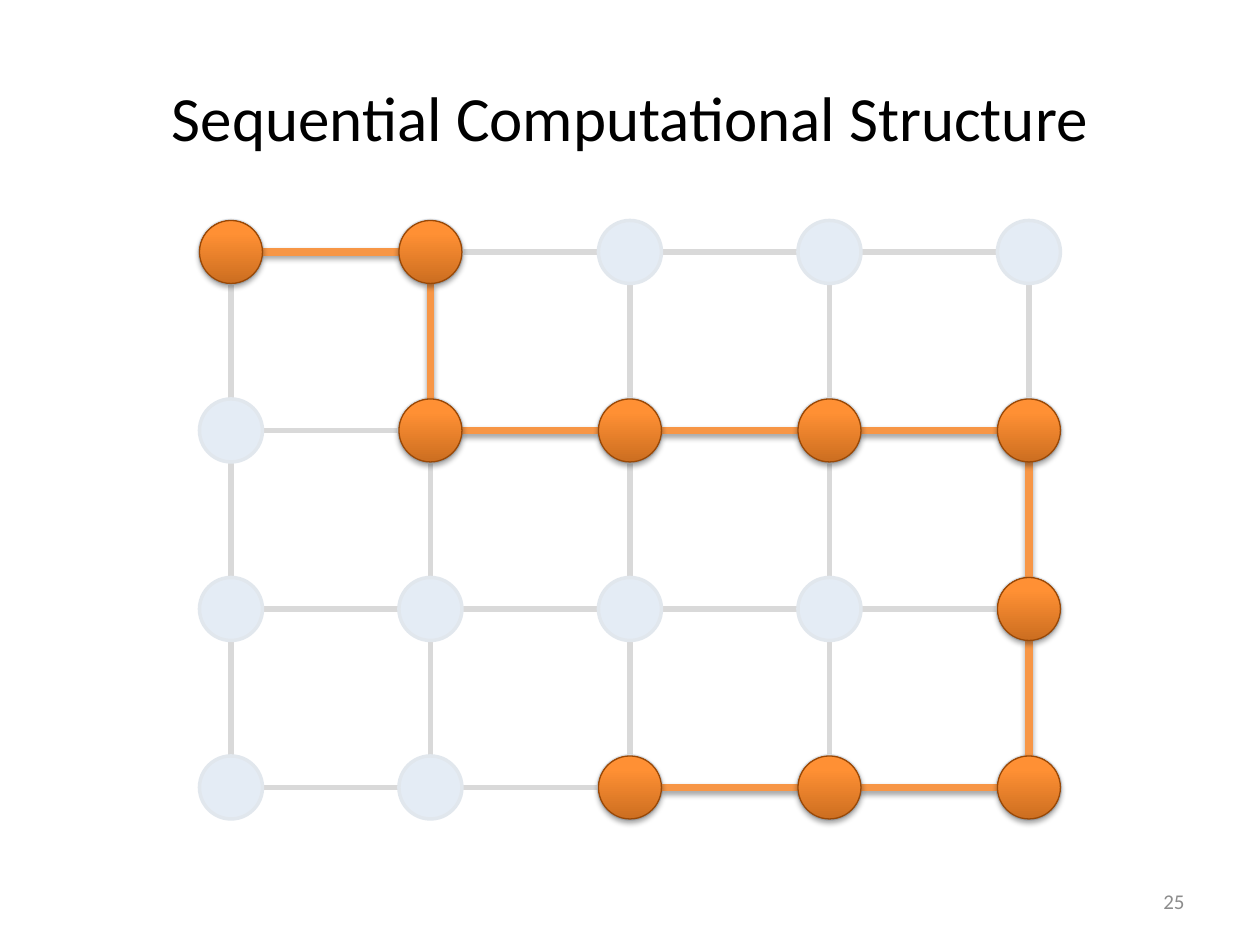
import copy
import itertools

import pptx
import pptx.dml.color
import pptx.enum.shapes
import pptx.enum.text
import pptx.oxml
import pptx.oxml.ns
import pptx.util

Pt = pptx.util.Pt
SHAPE = pptx.enum.shapes.MSO_SHAPE
ALIGN = pptx.enum.text.PP_ALIGN
MIDDLE = pptx.enum.text.MSO_ANCHOR.MIDDLE

COLUMNS, ROWS = 5, 4
NODE = 36
FLAME = [(0, "CC6E20"), (0.8, "FF9034"), (1, "FF9136")]
# Visited nodes as (column, row), in order
ROUTE = [(0, 0), (1, 0), (1, 1), (2, 1), (3, 1), (4, 1),
         (4, 2), (4, 3), (3, 3), (2, 3)]


def color(value):
    return pptx.dml.color.RGBColor.from_string(value)


def set_effect(shape, shadowed):
    """Give the shape a soft drop shadow, or none at all."""
    shadow = ('<a:outerShdw blurRad="40000" dist="23000" dir="5400000" rotWithShape="0">'
              '<a:srgbClr val="000000"><a:alpha val="35000"/></a:srgbClr></a:outerShdw>')
    shape._element.spPr.append(pptx.oxml.parse_xml(
        f'<a:effectLst {pptx.oxml.ns.nsdecls("a")}>{shadow if shadowed else ""}</a:effectLst>'))


def add_line(page, start, end, stroke, width, shadowed=False):
    line = page.shapes.add_connector(
        pptx.enum.shapes.MSO_CONNECTOR.STRAIGHT,
        *(Pt(value) for value in (*start, *end)))
    line.line.color.rgb = color(stroke)
    line.line.width = Pt(width)
    set_effect(line, shadowed)


def add_node(page, center, stroke, width, fill=None):
    """Add a circle; without a flat fill it is highlighted."""
    x, y = center
    node = page.shapes.add_shape(SHAPE.OVAL, Pt(x - NODE / 2), Pt(y - NODE / 2),
                                 Pt(NODE), Pt(NODE))
    if fill:
        node.fill.solid()
        node.fill.fore_color.rgb = color(fill)
    else:
        fill_gradient(node.fill, FLAME)
    node.line.color.rgb = color(stroke)
    node.line.width = Pt(width)
    set_effect(node, shadowed=fill is None)


def fill_gradient(fill, stops):
    fill.gradient()
    fill.gradient_angle = 90
    first = fill.gradient_stops[0]._gs
    for _ in stops[2:]:
        first.addnext(copy.deepcopy(first))
    for stop, (position, value) in zip(fill.gradient_stops, stops):
        stop.position = position
        stop.color.rgb = color(value)


def grid_center(box, column, row):
    left, top, width, height = box
    return (left + NODE / 2 + column * (width - NODE) / (COLUMNS - 1),
            top + NODE / 2 + row * (height - NODE) / (ROWS - 1))


def link_nodes(page, box, first, last, stroke, width, shadowed=False):
    """Join two nodes of one row or column from rim to rim."""
    start, end = grid_center(box, *first), grid_center(box, *last)
    steps = [(b > a) - (b < a) for a, b in zip(start, end)]
    add_line(page,
             [a + step * NODE / 2 for a, step in zip(start, steps)],
             [b - step * NODE / 2 for b, step in zip(end, steps)],
             stroke, width, shadowed)


def add_grid(page, box):
    for column in range(COLUMNS):
        link_nodes(page, box, (column, 0), (column, ROWS - 1), "000000", 3)
    for row in range(ROWS):
        link_nodes(page, box, (0, row), (COLUMNS - 1, row), "000000", 3)
    for row, column in itertools.product(range(ROWS), range(COLUMNS)):
        add_node(page, grid_center(box, column, row), "3A5F8C", 2, "4F81BD")


def add_veil(page, box):
    """Fade what lies behind with a translucent white sheet."""
    veil = page.shapes.add_shape(SHAPE.RECTANGLE, *(Pt(value) for value in box))
    veil.fill.solid()
    veil.fill.fore_color.rgb = color("FFFFFF")
    tint = veil._element.spPr.find(".//" + pptx.oxml.ns.qn("a:srgbClr"))
    tint.append(pptx.oxml.parse_xml(
        f'<a:alpha {pptx.oxml.ns.nsdecls("a")} val="85000"/>'))
    veil.line.fill.background()
    veil.shadow.inherit = False


def add_route(page, box):
    for first, last in itertools.pairwise(ROUTE):
        link_nodes(page, box, first, last, "F79646", 4.5, shadowed=True)
    for spot in ROUTE:
        add_node(page, grid_center(box, *spot), "984807", 0.75)


def write_text(shape, box, text, size, fill, alignment):
    shape.left, shape.top, shape.width, shape.height = (Pt(value) for value in box)
    frame = shape.text_frame
    frame.word_wrap = True
    frame.vertical_anchor = MIDDLE
    para = frame.paragraphs[0]
    para.text = text
    para.alignment = alignment
    para.font.name = "Calibri"
    para.font.size = Pt(size)
    para.font.color.rgb = color(fill)


def main():
    deck = pptx.Presentation()
    deck.slide_width, deck.slide_height = Pt(720), Pt(540)
    page = deck.slides.add_slide(deck.slide_layouts[5])
    write_text(page.shapes.title, (36, 21.6, 648, 90),
               "Sequential Computational Structure", 36, "000000", ALIGN.CENTER)
    grid_box = (114, 126, 492, 342)
    add_grid(page, grid_box)
    add_veil(page, (108, 120, 510, 360))
    add_route(page, grid_box)
    number = page.shapes.add_textbox(0, 0, 0, 0)
    write_text(number, (516, 500.5, 168, 28.8), "25", 12, "8C8C8C", ALIGN.RIGHT)
    deck.save("out.pptx")


if __name__ == "__main__":
    main()
